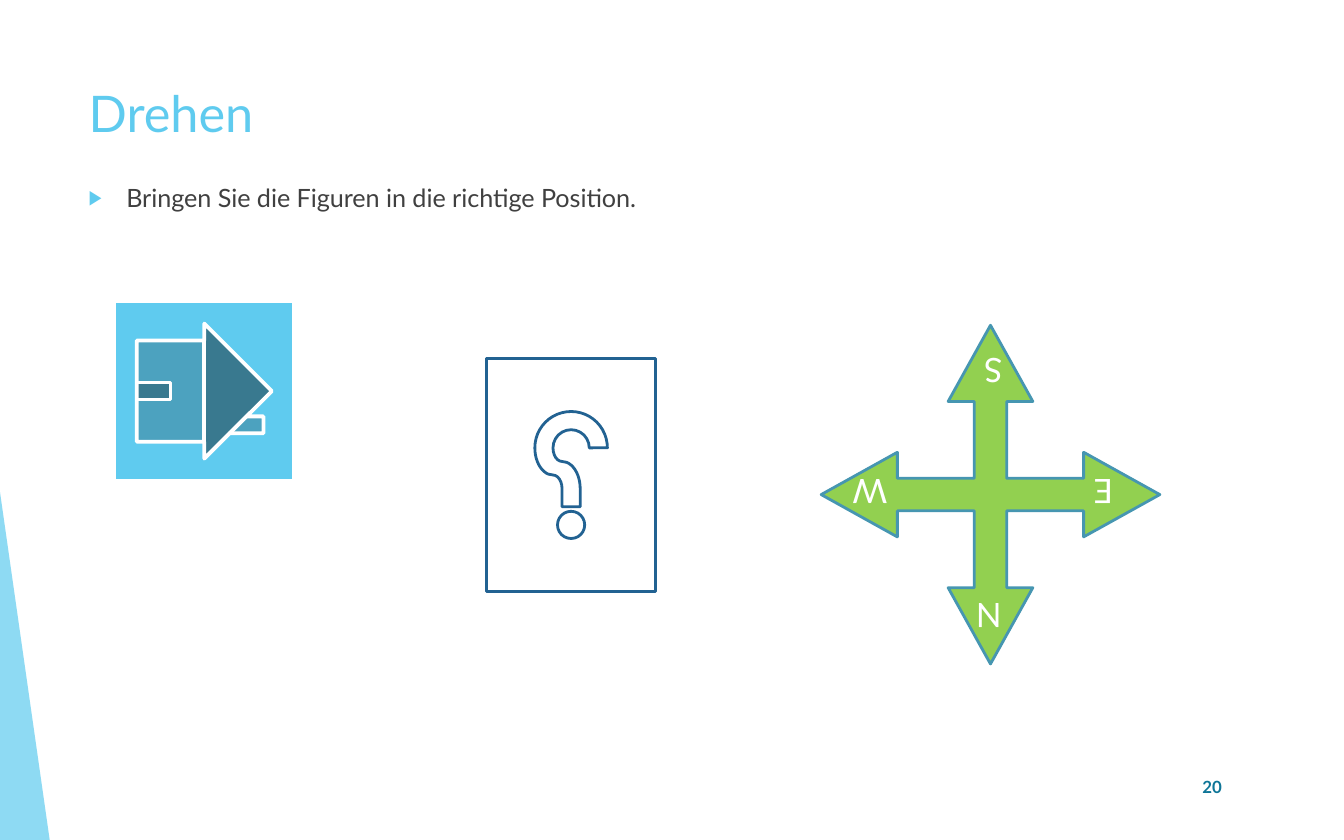
from lxml import etree
from pptx import Presentation
from pptx.dml.color import RGBColor
from pptx.enum.shapes import MSO_SHAPE
from pptx.enum.text import MSO_ANCHOR, MSO_AUTO_SIZE, PP_ALIGN
from pptx.oxml.ns import qn
from pptx.util import Inches, Pt

TRIANGLE = MSO_SHAPE.ISOSCELES_TRIANGLE
HOME_BUTTON = MSO_SHAPE.ACTION_BUTTON_HOME
HELP_BUTTON = MSO_SHAPE.ACTION_BUTTON_HELP
QUAD_ARROW = MSO_SHAPE.QUAD_ARROW
TOP, MIDDLE = MSO_ANCHOR.TOP, MSO_ANCHOR.MIDDLE
LEFT, CENTER, RIGHT = PP_ALIGN.LEFT, PP_ALIGN.CENTER, PP_ALIGN.RIGHT

SKY = RGBColor(0x5F, 0xCB, 0xEF)
WHITE = RGBColor(0xFF, 0xFF, 0xFF)
DARK_GREY = RGBColor(0x40, 0x40, 0x40)
TEAL = RGBColor(0x0F, 0x76, 0x98)
GREEN = RGBColor(0x92, 0xD0, 0x50)
STEEL = RGBColor(0x46, 0x96, 0xB1)
NAVY = RGBColor(0x22, 0x62, 0x92)

FONT = "Lato"
LETTER_SIZE = (0.36, 0.4)
COMPASS_LETTERS = {
    "N": (7.19, 4.39),
    "S": (7.21, 2.57),
    "E": (8.03, 3.47),
    "W": (6.34, 3.47),
}


def write_text(shape, text, size, color, align=LEFT, anchor=TOP, bold=False):
    """Fill a text frame with one formatted paragraph and return it."""
    frame = shape.text_frame
    frame_format = {"word_wrap": True, "auto_size": MSO_AUTO_SIZE.NONE,
                    "vertical_anchor": anchor}
    for name, value in frame_format.items():
        setattr(frame, name, value)
    paragraph = frame.paragraphs[0]
    paragraph.alignment = align
    run = paragraph.add_run()
    run.text = text
    font_format = {"name": FONT, "size": Pt(size), "bold": bold}
    for name, value in font_format.items():
        setattr(run.font, name, value)
    run.font.color.rgb = color
    return paragraph


def place(shape, left, top, width, height):
    position = {"left": left, "top": top, "width": width, "height": height}
    for name, value in position.items():
        setattr(shape, name, Inches(value))


def add_figure(shapes, kind, box, fill=None, line=None, line_width=1.5,
               adjustments=()):
    """Add a preset shape without shadow; no fill or line unless given."""
    figure = shapes.add_shape(kind, *map(Inches, box))
    figure.shadow.inherit = False
    for index, value in enumerate(adjustments):
        figure.adjustments[index] = value
    if fill is None:
        figure.fill.background()
    else:
        figure.fill.solid()
        figure.fill.fore_color.rgb = fill
    if line is None:
        figure.line.fill.background()
    else:
        figure.line.color.rgb = line
        figure.line.width = Pt(line_width)
    return figure


def add_label(shapes, box, text, size, color, **text_format):
    label = shapes.add_textbox(*map(Inches, box))
    write_text(label, text, size, color, anchor=MIDDLE, **text_format)
    return label


def set_bullet(paragraph, char, color, percent, indent):
    properties = paragraph._p.get_or_add_pPr()
    properties.set("marL", str(Inches(indent)))
    properties.set("indent", str(-Inches(indent)))
    bullet_color = etree.SubElement(properties, qn("a:buClr"))
    etree.SubElement(bullet_color, qn("a:srgbClr"), val=str(color))
    etree.SubElement(properties, qn("a:buSzPct"), val=str(percent * 1000))
    etree.SubElement(properties, qn("a:buFont"), typeface="Arial")
    etree.SubElement(properties, qn("a:buChar"), char=char)


def add_side_wedge(shapes):
    wedge = add_figure(shapes, TRIANGLE, (0, 3.66, 0.37, 2.59), SKY,
                       adjustments=(0,))
    color = wedge.fill._xPr.find(qn("a:solidFill"))[0]
    etree.SubElement(color, qn("a:alpha"), val="70000")


def add_compass(shapes):
    """Four-way arrow whose letters stand upside down."""
    compass = shapes.add_group_shape().shapes
    add_figure(compass, QUAD_ARROW, (6.11, 2.42, 2.52, 2.52), GREEN, STEEL,
               adjustments=(0.096, 0.125, 0.225))
    for letter, corner in COMPASS_LETTERS.items():
        label = add_label(compass, corner + LETTER_SIZE, letter, 18, WHITE,
                          align=CENTER)
        label.rotation = 180


def main():
    prs = Presentation()
    prs.slide_width, prs.slide_height = Inches(10), Inches(6.25)
    slide = prs.slides.add_slide(prs.slide_layouts[1])
    shapes = slide.shapes

    # Side decoration
    add_side_wedge(shapes)

    # Title and task
    title, task = slide.placeholders
    place(title, 0.56, 0.56, 8.62, 0.6)
    write_text(title, "Drehen", 27, SKY)
    place(task, 0.56, 1.31, 8.62, 4.19)
    sentence = write_text(
        task, "Bringen Sie die Figuren in die richtige Position.", 13.5, DARK_GREY)
    sentence.space_before = Pt(7.5)
    set_bullet(sentence, "▶", SKY, 80, 0.28)

    # Slide number
    add_label(shapes, (8.63, 5.69, 0.56, 0.33), "20", 9, TEAL,
              align=RIGHT, bold=True)

    # Figures to turn
    house = add_figure(shapes, HOME_BUTTON, (0.85, 2.24, 1.34, 1.34),
                       SKY, WHITE, 2)
    house.rotation = 90
    add_compass(shapes)
    question_mark = add_figure(shapes, HELP_BUTTON, (3.62, 2.67, 1.26, 1.73),
                               line=NAVY)
    question_mark._element.spPr.xfrm.set("flipH", "1")

    prs.save("out.pptx")


if __name__ == "__main__":
    main()
